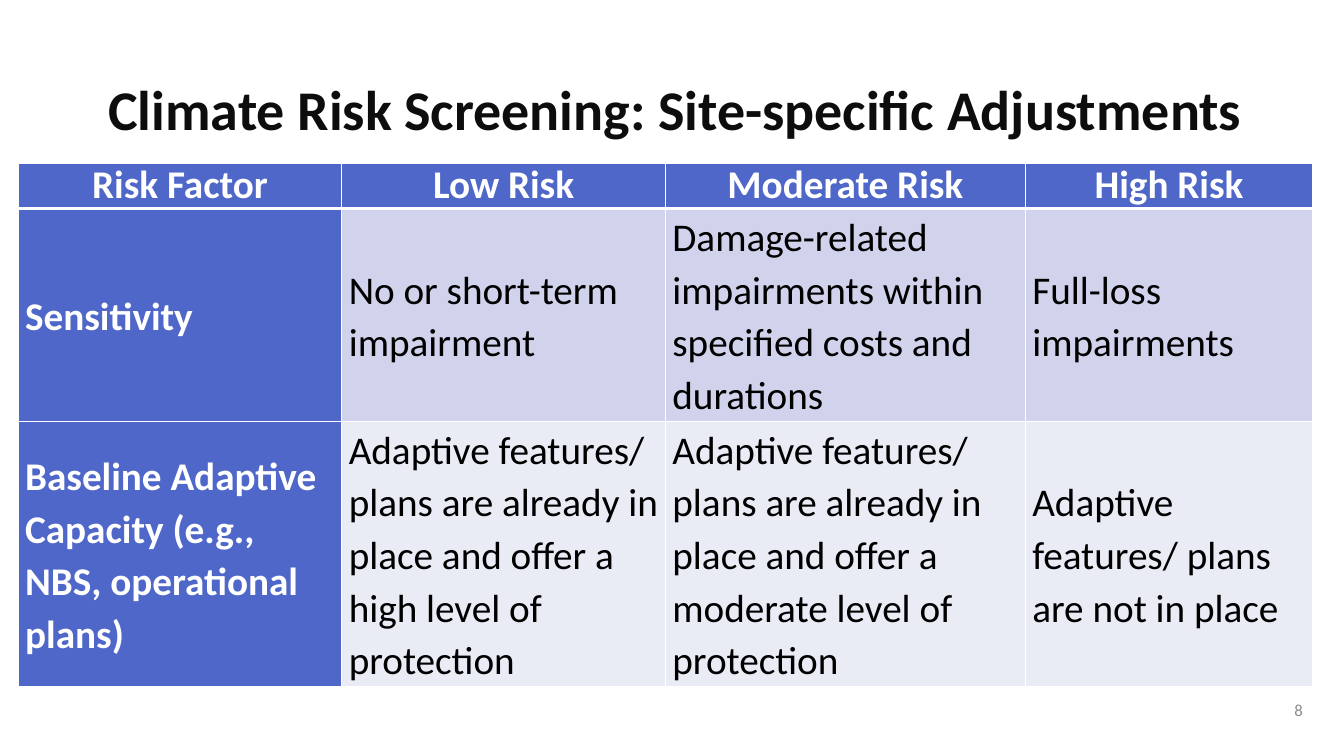
import dataclasses
import typing

import lxml.etree
import pptx
import pptx.dml.color
import pptx.enum.text
import pptx.oxml.ns
import pptx.util

Align = pptx.enum.text.PP_ALIGN
Anchor = pptx.enum.text.MSO_ANCHOR
SCALE = 9144
FONT = "Calibri"
HUES = {
    "title": "0D0D0D",
    "page": "8C8C8C",
    "head": "4E67C8",
    "dark": "D0D3EB",
    "light": "E9EBF5",
    "white": "FFFFFF",
    "black": "000000",
}
WIDTHS = (321, 321, 357, 285)


@dataclasses.dataclass(frozen=True)
class Style:
    size: int
    hue: str
    bold: bool
    align: Align
    anchor: Anchor
    space: typing.Optional[float] = None


@dataclasses.dataclass(frozen=True)
class Row:
    height: int
    band: str
    texts: tuple[str, ...]


TITLE = Style(40, "title", True, Align.CENTER, Anchor.MIDDLE)
PAGE = Style(12, "page", False, Align.RIGHT, Anchor.MIDDLE)
HEAD = Style(28, "white", True, Align.CENTER, Anchor.BOTTOM, 0.9)
LABEL = Style(28, "white", True, Align.LEFT, Anchor.MIDDLE, 1.1)
BODY = Style(28, "black", False, Align.LEFT, Anchor.MIDDLE, 1.1)

ROWS = (
    Row(32, "head", ("Risk Factor", "Low Risk", "Moderate Risk", "High Risk")),
    Row(142, "dark", (
        "Sensitivity",
        "No or short-term impairment",
        "Damage-related impairments within specified costs and durations",
        "Full-loss impairments",
    )),
    Row(142, "light", (
        "Baseline Adaptive Capacity (e.g., NBS, operational plans)",
        "Adaptive features/ plans are already in place and offer a high level of protection",
        "Adaptive features/ plans are already in place and offer a moderate level of protection",
        "Adaptive features/ plans are not in place",
    )),
)


def px(count: int) -> pptx.util.Emu:
    return pptx.util.Emu(count * SCALE)


def color(hue: str) -> pptx.dml.color.RGBColor:
    return pptx.dml.color.RGBColor.from_string(HUES[hue])


def write(frame: typing.Any, text: str, style: Style) -> None:
    frame.word_wrap = True
    para = frame.paragraphs[0]
    para.alignment = style.align
    if style.space:
        para.line_spacing = style.space
    run = para.add_run()
    run.text = text
    run.font.name = FONT
    run.font.size = pptx.util.Pt(style.size)
    run.font.bold = style.bold
    run.font.color.rgb = color(style.hue)


def edge(cell: typing.Any, side: str, points: int) -> None:
    qn = pptx.oxml.ns.qn
    props = cell._tc.get_or_add_tcPr()
    line = lxml.etree.SubElement(props, qn(f"a:ln{side}"), w=str(pptx.util.Pt(points)))
    fill = lxml.etree.SubElement(line, qn("a:solidFill"))
    lxml.etree.SubElement(fill, qn("a:srgbClr"), val=HUES["white"])


def paint(cell: typing.Any, text: str, style: Style, band: str, top: int, base: int) -> None:
    for side, points in (("L", 1), ("R", 1), ("T", top), ("B", base)):
        edge(cell, side, points)
    cell.fill.solid()
    cell.fill.fore_color.rgb = color(band)
    cell.vertical_anchor = style.anchor
    cell.margin_left = cell.margin_right = px(7)
    cell.margin_top = cell.margin_bottom = px(1)
    write(cell.text_frame, text, style)


def add_grid(slide: typing.Any) -> None:
    shape = slide.shapes.add_table(
        len(ROWS), len(WIDTHS), px(18), px(162), px(sum(WIDTHS)), px(506))
    table = shape.table
    for column, width in zip(table.columns, WIDTHS):
        column.width = px(width)
    for r, row in enumerate(ROWS):
        table.rows[r].height = px(row.height)
        for c, text in enumerate(row.texts):
            style = HEAD if r == 0 else LABEL if c == 0 else BODY
            band = "head" if c == 0 else row.band
            top = 3 if r == 1 else 1
            base = 3 if r == 0 else 1
            paint(table.cell(r, c), text, style, band, top, base)
    shape.height = px(506)


def main() -> None:
    deck = pptx.Presentation()
    deck.slide_width, deck.slide_height = px(1333), px(750)
    slide = deck.slides.add_slide(deck.slide_layouts[5])

    title = slide.shapes.title
    title.left, title.top, title.width, title.height = map(px, (39, 59, 1261, 96))
    title.text_frame.vertical_anchor = TITLE.anchor
    write(title.text_frame, "Climate Risk Screening: Site-specific Adjustments", TITLE)

    add_grid(slide)

    page = slide.shapes.add_textbox(*map(px, (991, 692, 311, 25)))
    page.text_frame.vertical_anchor = PAGE.anchor
    write(page.text_frame, "8", PAGE)

    deck.save("out.pptx")


if __name__ == "__main__":
    main()
